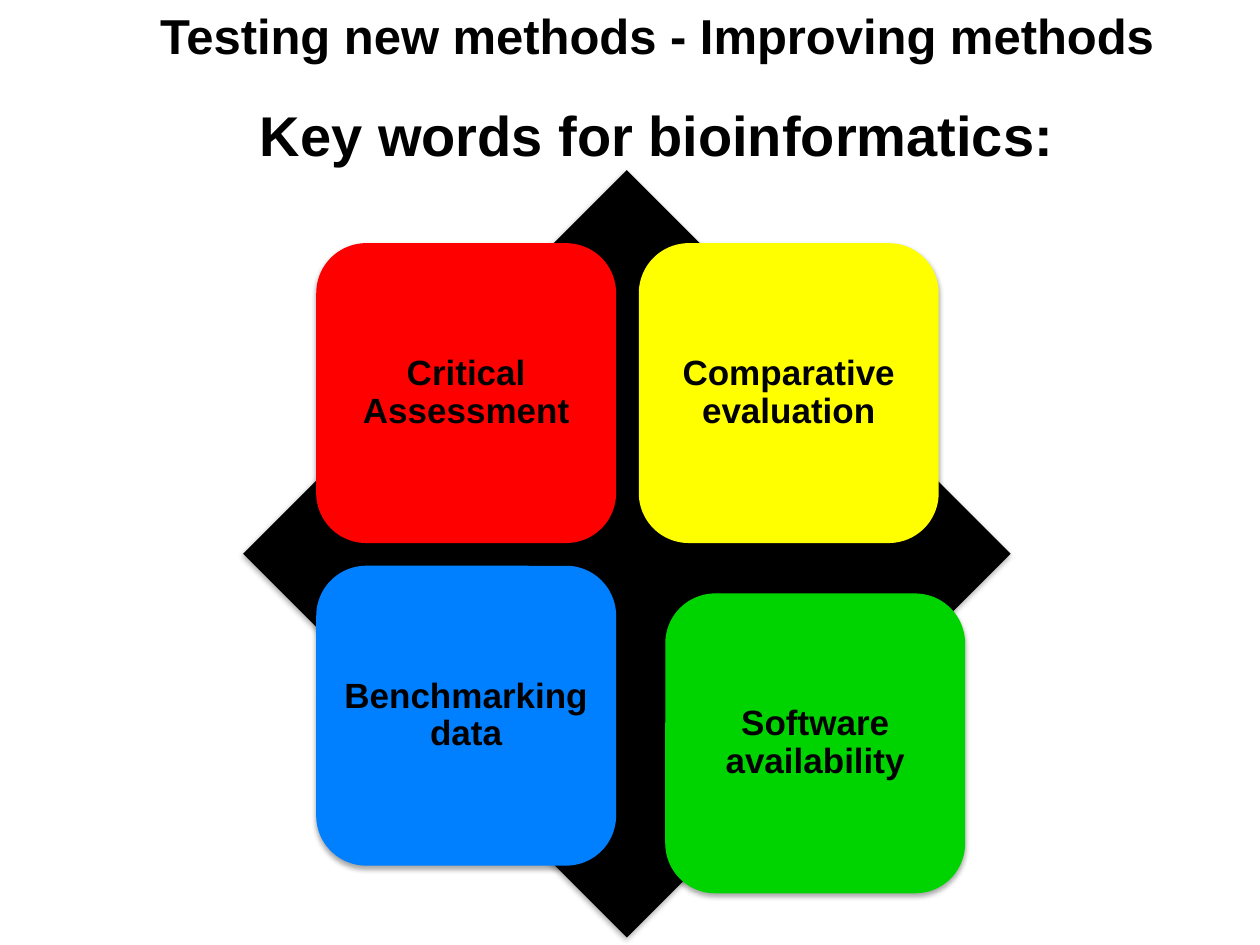
from lxml.etree import SubElement
from pptx import Presentation
from pptx.dml.color import RGBColor
from pptx.enum.shapes import MSO_SHAPE
from pptx.enum.text import MSO_ANCHOR, MSO_AUTO_SIZE, PP_ALIGN
from pptx.oxml.ns import qn
from pptx.util import Inches, Pt

COLORS = {"black": "000000", "red": "FF0000", "yellow": "FFFF00",
          "blue": "0080FF", "green": "00D400"}


def write(para, text, size):
    para.alignment = PP_ALIGN.CENTER
    run = para.add_run()
    run.text = text
    run.font.name = "Arial"
    run.font.size = Pt(size)
    run.font.bold = True
    run.font.color.rgb = RGBColor.from_string(COLORS["black"])


def block(kind, left, top, side, color):
    """Add a square, borderless shape with a soft shadow below it."""
    shape = slide.shapes.add_shape(
        kind, Inches(left), Inches(top), Inches(side), Inches(side))
    shape.fill.solid()
    shape.fill.fore_color.rgb = RGBColor.from_string(COLORS[color])
    shape.line.fill.background()
    shape.shadow.inherit = False
    effects = shape._element.spPr.find(qn("a:effectLst"))
    shadow = SubElement(effects, qn("a:outerShdw"), blurRad=str(Pt(3.1)),
                        dist=str(Pt(1.8)), dir="5400000", rotWithShape="0")
    tint = SubElement(shadow, qn("a:srgbClr"), val=COLORS["black"])
    SubElement(tint, qn("a:alpha"), val="35000")
    return shape


deck = Presentation()
deck.slide_width, deck.slide_height = Inches(10), Inches(7.5)
slide = deck.slides.add_slide(deck.slide_layouts[5])

# Title
title = slide.shapes.title
title.left, title.top = Inches(0.11), Inches(-0.01)
title.width, title.height = Inches(9.71), Inches(1.45)
frame = title.text_frame
frame.word_wrap = True
frame.auto_size = MSO_AUTO_SIZE.NONE
frame.vertical_anchor = MSO_ANCHOR.TOP
head, sub = frame.paragraphs[0], frame.add_paragraph()
write(head, "Testing new methods - Improving methods", 28)
write(sub, "Key words for bioinformatics:", 32)
sub.space_before = Pt(21)
for para in (head, sub):
    props = para._p.get_or_add_pPr()
    props.set("marL", str(Inches(0.5)))
    props.set("indent", "0")

# Diamond with a two by two grid of tiles
SPAN, SIDE, STEP = 6.09, 2.38, 2.56
LEFT, TOP = 1.93, 1.35
INSET = 0.58
block(MSO_SHAPE.DIAMOND, LEFT, TOP, SPAN, "black")

# Text, colour, column, row, shift right and down
tiles = [
    ("Critical Assessment", "red", 0, 0, 0, 0),
    ("Comparative evaluation", "yellow", 1, 0, 0, 0),
    ("Benchmarking data", "blue", 0, 1, 0, 0),
    ("Software availability", "green", 1, 1, 0.21, 0.22),
]
for text, color, col, row, right, down in tiles:
    tile = block(MSO_SHAPE.ROUNDED_RECTANGLE, LEFT + INSET + col * STEP + right,
                 TOP + INSET + row * STEP + down, SIDE, color)
    frame = tile.text_frame
    frame.word_wrap = True
    frame.vertical_anchor = MSO_ANCHOR.MIDDLE
    frame.margin_left = frame.margin_right = Inches(0.08)
    frame.margin_top = frame.margin_bottom = Inches(0.08)
    para = frame.paragraphs[0]
    para.line_spacing = 0.9
    write(para, text, 20)

deck.save("out.pptx")
